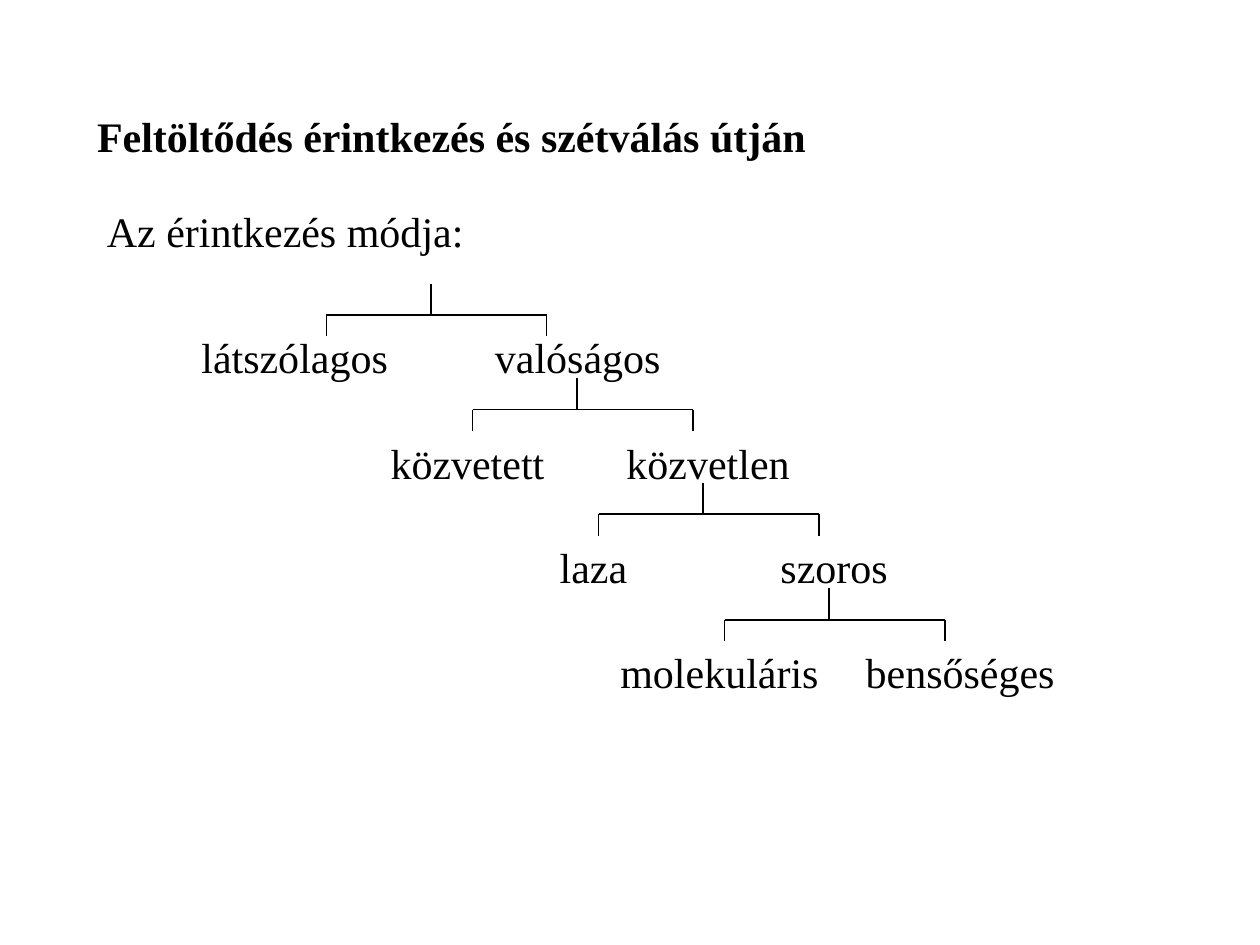
"""Build a slide with a branching tree of the kinds of electrical contact."""
from typing import NamedTuple

from lxml.etree import SubElement
from pptx import Presentation
from pptx.dml.color import RGBColor
from pptx.enum.shapes import MSO_CONNECTOR
from pptx.enum.text import MSO_ANCHOR, MSO_AUTO_SIZE, PP_ALIGN
from pptx.oxml.ns import qn
from pptx.util import Inches, Pt

BLACK = RGBColor(0, 0, 0)
FONT = "Times New Roman"
ROW_H = 0.5
LABEL_W = 2.08
STEM, DROP = 0.25, 0.17
LEFT_ARM, SPAN = 0.83, 1.75


class Label(NamedTuple):
    text: str
    x: float
    y: float
    align: PP_ALIGN = PP_ALIGN.CENTER


class Fork(NamedTuple):
    x: float
    y: float


LABELS = [
    Label("látszólagos", 1.5, 2.58, PP_ALIGN.LEFT),
    Label("valóságos", 3.83, 2.58, PP_ALIGN.LEFT),
    Label("közvetett", 2.67, 3.42),
    Label("közvetlen", 4.58, 3.42),
    Label("laza", 3.67, 4.25),
    Label("szoros", 5.58, 4.25),
    Label("molekuláris", 4.67, 5.08),
    Label("bensőséges", 6.58, 5.08),
]
FORKS = [Fork(3.42, 2.25), Fork(4.58, 3), Fork(5.58, 3.83), Fork(6.58, 4.67)]


def write(sp, text: str, *, x: float, y: float, w: float,
          align: PP_ALIGN = PP_ALIGN.LEFT, bold: bool = False) -> None:
    """Place a text shape and fill it with one formatted paragraph."""
    sp.left, sp.top, sp.width, sp.height = map(Inches, (x, y, w, ROW_H))
    tf = sp.text_frame
    tf.word_wrap = True
    tf.auto_size = MSO_AUTO_SIZE.NONE
    tf.vertical_anchor = MSO_ANCHOR.TOP
    p = tf.paragraphs[0]
    p.alignment = align
    r = p.add_run()
    r.text = text
    r.font.name = FONT
    r.font.size = Pt(24)
    r.font.bold = bold
    r.font.color.rgb = BLACK


def add_text(s, text: str, **fmt) -> None:
    """Add a text box with the given format."""
    write(s.shapes.add_textbox(0, 0, 0, 0), text, **fmt)


def add_line(s, x1: float, y1: float, x2: float, y2: float) -> None:
    """Draw a thin black line without a shadow."""
    ends = map(Inches, (x1, y1, x2, y2))
    ln = s.shapes.add_connector(MSO_CONNECTOR.STRAIGHT, *ends)
    ln.line.color.rgb = BLACK
    ln.line.width = Pt(0.75)
    SubElement(ln._element.spPr, qn("a:effectLst"))


def add_fork(s, fork: Fork) -> None:
    """Draw a stem, a crossbar and two drops."""
    bar = fork.y + STEM
    left = fork.x - LEFT_ARM
    right = left + SPAN
    add_line(s, fork.x, bar, fork.x, fork.y)
    add_line(s, left, bar, right, bar)
    for x in (left, right):
        add_line(s, x, bar, x, bar + DROP)


def main() -> None:
    """Build and save the slide."""
    prs = Presentation()
    prs.slide_width, prs.slide_height = Inches(10), Inches(7.5)
    s = prs.slides.add_slide(prs.slide_layouts[5])
    write(s.shapes.title, "Feltöltődés érintkezés és szétválás útján",
          x=0.67, y=0.83, w=7.83, bold=True)
    add_text(s, "Az érintkezés módja:", x=0.75, y=1.58, w=4.17)
    for label in LABELS:
        add_text(s, label.text, x=label.x, y=label.y, w=LABEL_W, align=label.align)
    for fork in FORKS:
        add_fork(s, fork)
    prs.save("out.pptx")


if __name__ == "__main__":
    main()
